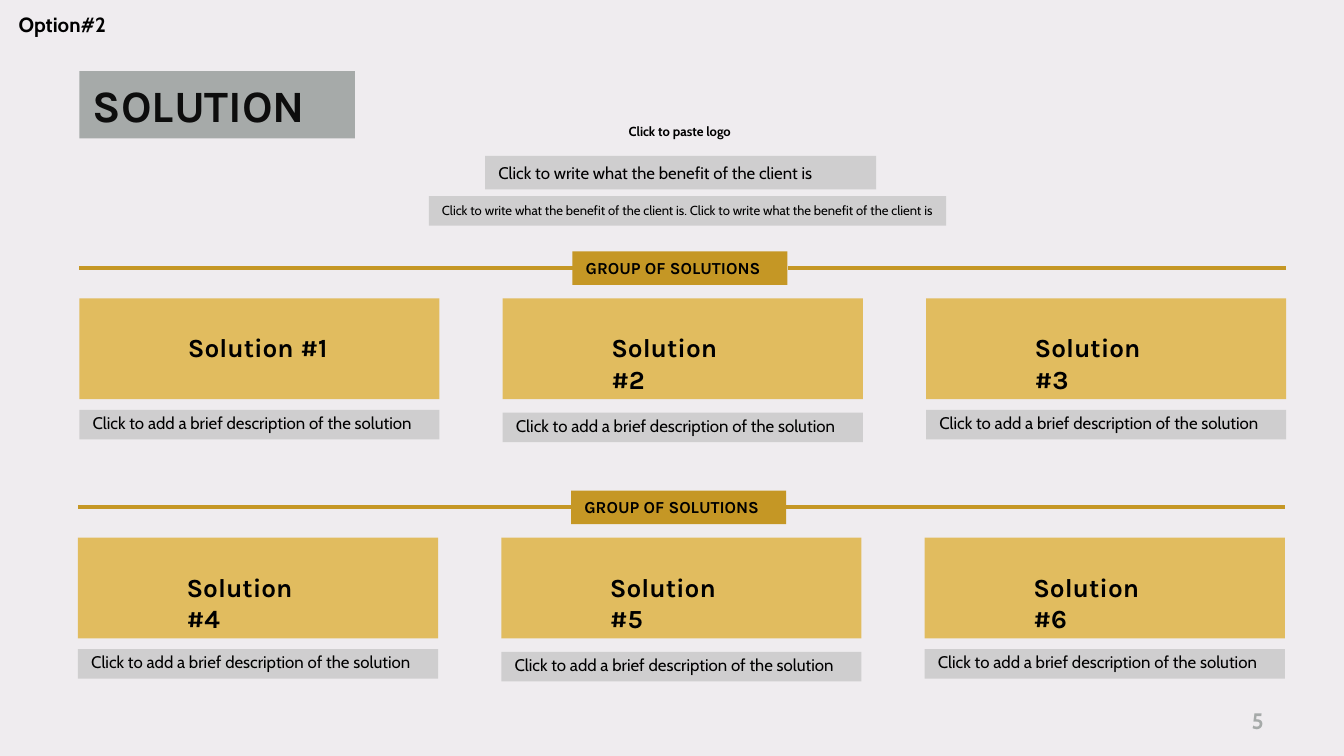
"""Build the solution slide: two titled groups of three solution cards."""
from lxml import etree
from pptx import Presentation
from pptx.dml.color import RGBColor
from pptx.enum.shapes import MSO_CONNECTOR, MSO_SHAPE
from pptx.enum.text import MSO_ANCHOR, MSO_AUTO_SIZE, PP_ALIGN
from pptx.oxml.ns import qn
from pptx.util import Inches, Pt

RECTANGLE, STRAIGHT = MSO_SHAPE.RECTANGLE, MSO_CONNECTOR.STRAIGHT
TOP, MIDDLE = MSO_ANCHOR.TOP, MSO_ANCHOR.MIDDLE
LEFT, RIGHT = PP_ALIGN.LEFT, PP_ALIGN.RIGHT
GROW, FIXED = MSO_AUTO_SIZE.SHAPE_TO_FIT_TEXT, MSO_AUTO_SIZE.NONE

BACKGROUND = RGBColor(0xEF, 0xEC, 0xEF)
GREY = RGBColor(0xA6, 0xAA, 0xA9)
PALE_GREY = RGBColor(0xCF, 0xCE, 0xCF)
GOLD = RGBColor(0xC5, 0x97, 0x25)
PALE_GOLD = RGBColor(0xE1, 0xBC, 0x5F)
INK = RGBColor(0x0D, 0x0D, 0x0D)
BLACK = RGBColor(0, 0, 0)
HEADING_FONT, BODY_FONT = "Karla", "Cabin"

TITLE = "SOLUTION"
OPTION = "Option#2"
LOGO_PROMPT = "Click to paste logo"
BENEFIT = "Click to write what the benefit of the client is"
BENEFITS = f"{BENEFIT}. {BENEFIT}"
DESCRIPTION = "Click to add a brief description of the solution"
PAGE = "5"
GROUPS = [
    ("GROUP OF SOLUTIONS", ["Solution #1", "Solution #2", "Solution #3"]),
    ("GROUP OF SOLUTIONS", ["Solution #4", "Solution #5", "Solution #6"]),
]

SLIDE_WIDTH = 10
SLIDE_HEIGHT = SLIDE_WIDTH * 9 / 16
GRID_LEFT, GRID_TOP = 0.59, 1.87
COLUMN_PITCH, GROUP_PITCH, GROUP_SHIFT = 3.15, 1.78, -0.01
CARD_WIDTH, CARD_HEIGHT = 2.68, 0.75
NAME_WIDTH, NAME_HEIGHT = 1.26, 0.34
LABEL_WIDTH, LABEL_HEIGHT = 1.6, 0.25
GRID_WIDTH = 2 * COLUMN_PITCH + CARD_WIDTH
LABEL_OFFSET, CARD_OFFSET, NAME_OFFSET = 3.67, 0.35, 0.55
DESCRIPTION_OFFSETS = [1.18, 1.2, 1.18]

prs = Presentation()
prs.slide_width, prs.slide_height = Inches(SLIDE_WIDTH), Inches(SLIDE_HEIGHT)
slide = prs.slides.add_slide(prs.slide_layouts[5])
slide.background.fill.solid()
slide.background.fill.fore_color.rgb = BACKGROUND


def write(holder, text, size, font=BODY_FONT, color=BLACK, bold=False,
          align=LEFT, anchor=TOP, spacing=1.0, fit=GROW):
    frame = holder.text_frame
    frame.word_wrap, frame.auto_size, frame.vertical_anchor = True, fit, anchor
    paragraph = frame.paragraphs[0]
    paragraph.alignment, paragraph.line_spacing = align, spacing
    run = paragraph.add_run()
    run.text = text
    run.font.size, run.font.name, run.font.bold = Pt(size), font, bold
    run.font.color.rgb = color


def panel(left, top, width, height, fill):
    box = slide.shapes.add_shape(RECTANGLE, *map(Inches, (left, top, width, height)))
    box.shadow.inherit = False
    box.fill.solid()
    box.fill.fore_color.rgb = fill
    box.line.fill.background()
    return box


def label(left, top, width, height):
    return slide.shapes.add_textbox(*map(Inches, (left, top, width, height)))


def rule(start, end, y):
    line = slide.shapes.add_connector(STRAIGHT, *map(Inches, (start, y, end, y)))
    line.line.color.rgb, line.line.width = GOLD, Pt(2.25)
    etree.SubElement(line._element.spPr, qn("a:effectLst"))


def solution_group(left, top, heading, solutions):
    for column, solution in enumerate(solutions):
        x = left + column * COLUMN_PITCH
        panel(x, top + CARD_OFFSET, CARD_WIDTH, CARD_HEIGHT, PALE_GOLD)
        name = label(x + (CARD_WIDTH - NAME_WIDTH) / 2, top + NAME_OFFSET,
                     NAME_WIDTH, NAME_HEIGHT)
        write(name, solution, 14, font=HEADING_FONT, bold=True)
        note = panel(x, top + DESCRIPTION_OFFSETS[column], CARD_WIDTH, 0.22, PALE_GREY)
        write(note, DESCRIPTION, 9, spacing=0.8)
    label_left, middle = left + LABEL_OFFSET, top + LABEL_HEIGHT / 2
    tag = panel(label_left, top, LABEL_WIDTH, LABEL_HEIGHT, GOLD)
    write(tag, heading, 9, font=HEADING_FONT, bold=True)
    rule(label_left, left, middle)
    rule(left + GRID_WIDTH, label_left + LABEL_WIDTH, middle)


title = slide.shapes.title
title.left, title.top = Inches(GRID_LEFT), Inches(0.53)
title.width, title.height = Inches(2.05), Inches(0.5)
title.fill.solid()
title.fill.fore_color.rgb = GREY
write(title, TITLE, 24, font=HEADING_FONT, color=INK, bold=True, fit=FIXED)

write(label(0.04, 0.04, 0.94, 0.29), OPTION, 11, bold=True)
write(label(4.58, 0.87, 0.97, 0.22), LOGO_PROMPT, 7, bold=True)
write(panel(3.61, 1.16, 2.91, 0.25, PALE_GREY), BENEFIT, 9)
write(panel(3.19, 1.46, 3.85, 0.22, PALE_GREY), BENEFITS, 7)

for row, (heading, solutions) in enumerate(GROUPS):
    solution_group(GRID_LEFT + row * GROUP_SHIFT, GRID_TOP + row * GROUP_PITCH,
                   heading, solutions)

write(label(7.17, 5.21, 2.33, 0.3), PAGE, 12, color=GREY, bold=True,
      align=RIGHT, anchor=MIDDLE, fit=FIXED)

prs.save("out.pptx")
